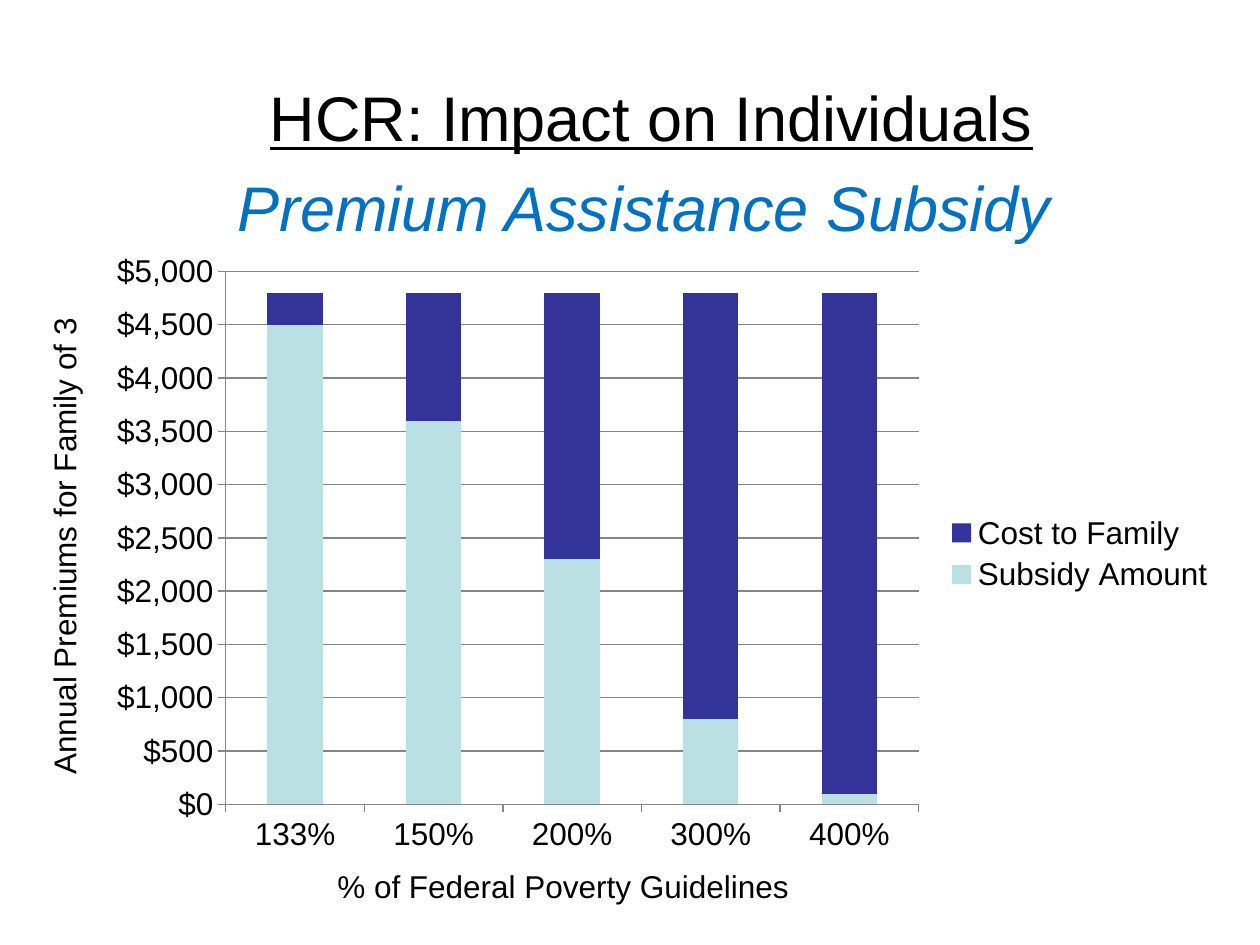
from lxml import etree
from pptx import Presentation
from pptx.chart import data
from pptx.dml.color import RGBColor
from pptx.enum import chart as charts, text
from pptx.oxml import ns
from pptx.util import Cm, Pt

COLORS = {"text": "000000", "subtitle": "0070C0", "grid": "868686",
          "Subsidy Amount": "BBE0E3", "Cost to Family": "333399"}


def color(name):
    return RGBColor.from_string(COLORS[name])


def set_text(shape, wording, size, color_name="text", align=text.PP_ALIGN.LEFT):
    paragraph = shape.text_frame.paragraphs[0]
    paragraph.text = wording
    paragraph.alignment = align
    paragraph.font.name = "Arial"
    paragraph.font.size = Pt(size)
    paragraph.font.color.rgb = color(color_name)
    return paragraph


presentation = Presentation()
presentation.slide_width, presentation.slide_height = Cm(25.4), Cm(19.05)
slide = presentation.slides.add_slide(presentation.slide_layouts[5])

# Title
title = slide.shapes.title
title.left, title.top, title.width, title.height = Cm(1.7), Cm(0.76), Cm(22.86), Cm(3.18)
title.text_frame.vertical_anchor = text.MSO_ANCHOR.MIDDLE
set_text(title, "HCR: Impact on Individuals", 36, align=text.PP_ALIGN.CENTER).font.underline = True

# Stacked column chart
chart_data = data.CategoryChartData(number_format='"$"#,##0')
chart_data.categories = [1.33, 1.5, 2, 3, 4]
chart_data.categories.number_format = "0%"
chart_data.add_series("Subsidy Amount", [4500, 3600, 2300, 800, 100])
chart_data.add_series("Cost to Family", [300, 1200, 2500, 4000, 4700])
chart = slide.shapes.add_chart(charts.XL_CHART_TYPE.COLUMN_STACKED,
                               Cm(1.9), Cm(4.88), Cm(22.86), Cm(12.57), chart_data).chart
chart.has_title = False
chart.font.name = "Arial"
chart.font.size = Pt(18)
chart.font.color.rgb = color("text")

plot = chart.plots[0]
plot.gap_width, plot.overlap, plot.vary_by_categories = 150, 100, False
for series in plot.series:
    series.format.fill.solid()
    series.format.fill.fore_color.rgb = color(series.name)

# Axes and legend
value_axis, category_axis = chart.value_axis, chart.category_axis
value_axis.minimum_scale, value_axis.maximum_scale, value_axis.major_unit = 0, 5000, 500
value_axis.has_major_gridlines = True
for axis, number_format in ((value_axis, '"$"#,##0'), (category_axis, "0%")):
    axis.major_tick_mark = charts.XL_TICK_MARK.OUTSIDE
    axis.tick_labels.number_format = number_format
    axis.tick_labels.number_format_is_linked = False
for line in (value_axis.format.line, category_axis.format.line,
             value_axis.major_gridlines.format.line):
    line.color.rgb = color("grid")
    line.width = Pt(0.75)
chart.has_legend = True
chart.legend.position = charts.XL_LEGEND_POSITION.RIGHT
chart.legend.include_in_layout = False

# Fixed inner plot area, as fractions of the chart
plot_area = plot._element.getparent()
for layout in plot_area.findall(ns.qn("c:layout")):
    plot_area.remove(layout)
layout = etree.Element(ns.qn("c:layout"))
plot_area.insert(0, layout)
manual = etree.SubElement(layout, ns.qn("c:manualLayout"))
for tag, value in (("layoutTarget", "inner"), ("xMode", "edge"), ("yMode", "edge"),
                   ("x", 0.116), ("y", 0.047), ("w", 0.611), ("h", 0.855)):
    etree.SubElement(manual, ns.qn(f"c:{tag}"), val=str(value))

# Axis captions
for wording, left, top, width, rotation in (
        ("% of Federal Poverty Guidelines", 6.55, 17.35, 9.73, 0),
        ("Annual Premiums for Family of 3", -4.11, 9.96, 10.8, 270)):
    caption = slide.shapes.add_textbox(Cm(left), Cm(top), Cm(width), Cm(1.02))
    caption.rotation = rotation
    caption.text_frame.word_wrap = True
    set_text(caption, wording, 18)

# Subtitle
subtitle = slide.shapes.add_textbox(Cm(4.45), Cm(3.28), Cm(17.07), Cm(1.8))
subtitle.text_frame.word_wrap = False
set_text(subtitle, "Premium Assistance Subsidy", 36, "subtitle",
         text.PP_ALIGN.CENTER).font.italic = True

presentation.save("out.pptx")
